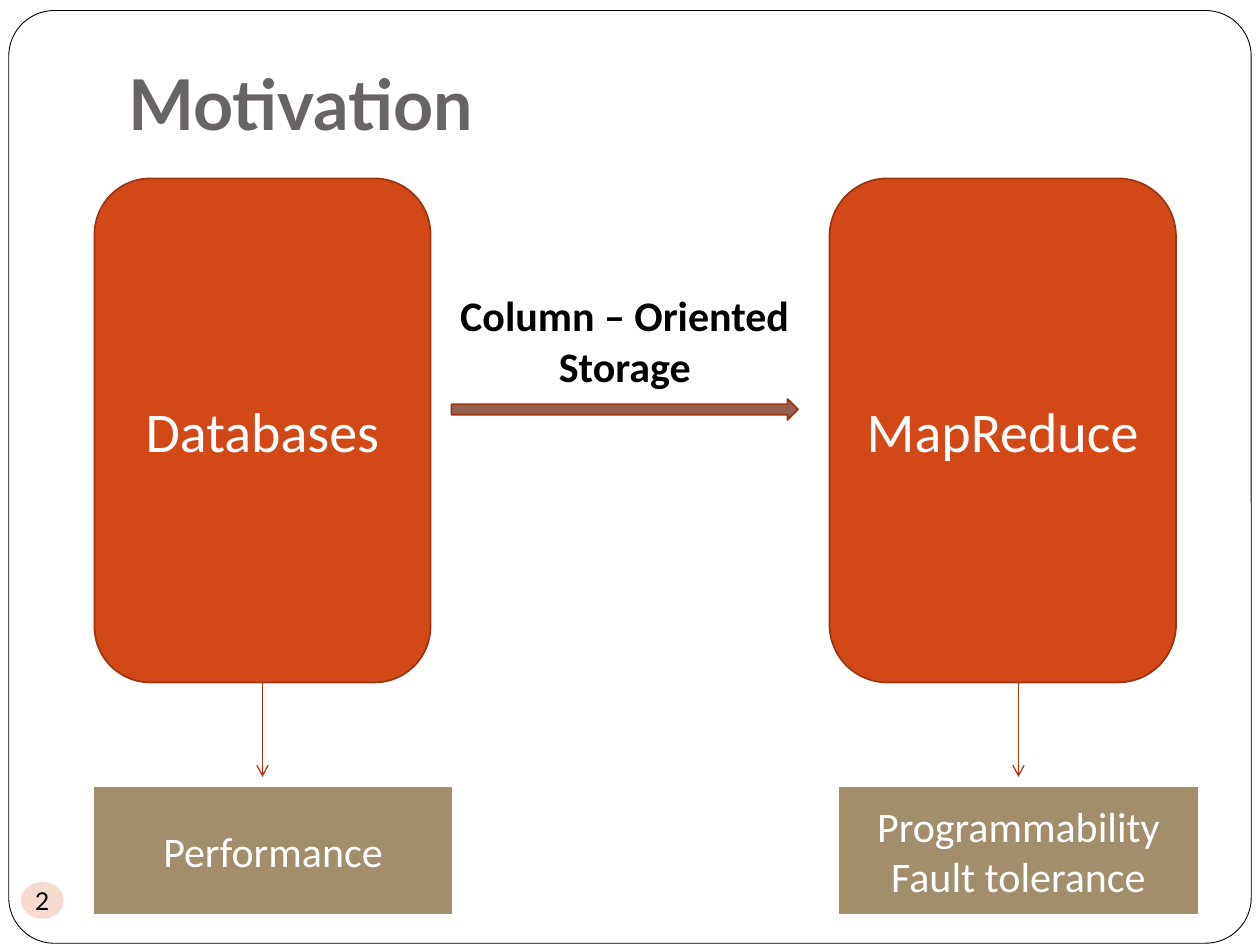
from dataclasses import dataclass

from lxml.etree import SubElement
from pptx import Presentation
from pptx.dml.color import RGBColor as RGB
from pptx.enum.shapes import MSO_CONNECTOR as CONNECTOR, MSO_SHAPE as SHAPE
from pptx.enum.text import MSO_ANCHOR as ANCHOR, MSO_AUTO_SIZE as AUTO_SIZE, PP_ALIGN as ALIGN
from pptx.oxml.ns import qn
from pptx.util import Pt


@dataclass(frozen=True)
class Theme:
    white: RGB = RGB(0xFF, 0xFF, 0xFF)
    black: RGB = RGB(0, 0, 0)
    title: RGB = RGB(0x69, 0x64, 0x64)
    system: RGB = RGB(0xD3, 0x48, 0x17)
    outline: RGB = RGB(0x9C, 0x35, 0x11)
    link: RGB = RGB(0xB1, 0x36, 0x0B)
    flow: RGB = RGB(0x95, 0x62, 0x51)
    benefit: RGB = RGB(0xA2, 0x8E, 0x6A)
    heading_font: str = "Lato"
    body_font: str = "Calibri"
    title_size: int = 40
    system_size: int = 32
    label_size: int = 24
    number_size: int = 14


T = Theme()


def pts(*values):
    return [Pt(v) for v in values]


def write(tf, lines, size, color, font=T.body_font, bold=False, align=ALIGN.CENTER):
    """Fill a text frame with one paragraph per line."""
    for i, line in enumerate(lines):
        p = tf.add_paragraph() if i else tf.paragraphs[0]
        p.text = line
        p.alignment = align
        p.font.name, p.font.size, p.font.bold = font, Pt(size), bold
        p.font.color.rgb = color


def add_box(slide, kind, box, fill, line=None, width=1):
    s = slide.shapes.add_shape(kind, *pts(*box))
    s.shadow.inherit = False
    s.fill.solid()
    s.fill.fore_color.rgb = fill
    if line is None:
        s.line.fill.background()
    else:
        s.line.color.rgb = line
        s.line.width = Pt(width)
    s.text_frame.vertical_anchor = ANCHOR.MIDDLE
    return s


def add_link(slide, start, end):
    """Draw a thin line with an open arrowhead at its end."""
    c = slide.shapes.add_connector(CONNECTOR.STRAIGHT, *pts(*start, *end))
    c.line.color.rgb = T.link
    c.line.width = Pt(0.75)
    SubElement(c.line._get_or_add_ln(), qn("a:tailEnd"), type="arrow")
    SubElement(c._element.spPr, qn("a:effectLst"))
    return c


def draw_frame(slide, box):
    s = add_box(slide, SHAPE.ROUNDED_RECTANGLE, box, T.white, T.black, 0.5)
    s.adjustments[0] = 0.049
    tree = slide.shapes._spTree
    tree.remove(s._element)
    tree.insert(2, s._element)


def draw_title(slide, box, text):
    title = slide.shapes.title
    title.left, title.top, title.width, title.height = pts(*box)
    tf = title.text_frame
    tf.auto_size = AUTO_SIZE.NONE
    tf.vertical_anchor = ANCHOR.BOTTOM
    tf.margin_bottom = Pt(7.2)
    write(tf, [text], T.title_size, T.title, T.heading_font, True, ALIGN.LEFT)


def draw_system(slide, box, name, benefits, link_x, benefit_x):
    """Draw a system with an arrow down to its benefits; x offsets are from the box."""
    x, y, w, h = box
    system_h, link_h, benefit_w, benefit_h = 288, 54, 204, 72
    system = add_box(slide, SHAPE.ROUNDED_RECTANGLE, (x, y, w, system_h), T.system, T.outline)
    write(system.text_frame, [name], T.system_size, T.white)

    benefit = add_box(slide, SHAPE.RECTANGLE,
                      (x + benefit_x, y + h - benefit_h, benefit_w, benefit_h),
                      T.benefit, T.benefit)
    write(benefit.text_frame, benefits, T.label_size, T.white)

    top = y + system_h
    link = add_link(slide, (x + link_x, top), (x + link_x, top + link_h))
    if link_x == w / 2:
        link.begin_connect(system, 2)


def draw_flow(slide, box, lines):
    """Draw a label above a block arrow that is inset at both sides."""
    x, y, w, h = box
    inset, arrow_h = 12, 12
    label = slide.shapes.add_textbox(*pts(x, y, w, h - arrow_h))
    label.text_frame.word_wrap = True
    write(label.text_frame, lines, T.label_size, T.black, bold=True)
    add_box(slide, SHAPE.RIGHT_ARROW,
            (x + inset, y + h - arrow_h, w - 2 * inset, arrow_h), T.flow, T.outline)


def draw_slide_number(slide, box, number):
    s = add_box(slide, SHAPE.OVAL, box, T.system)
    color = s._element.spPr.find(qn("a:solidFill"))[0]
    SubElement(color, qn("a:alpha"), val="20000")
    tf = s.text_frame
    tf.word_wrap = False
    tf.margin_left = tf.margin_top = tf.margin_right = tf.margin_bottom = 0
    write(tf, [str(number)], T.number_size, T.black, T.heading_font)


def main():
    prs = Presentation()
    prs.slide_width, prs.slide_height = pts(720, 540)
    slide = prs.slides.add_slide(prs.slide_layouts[5])
    draw_frame(slide, (5, 6, 710, 533))
    draw_title(slide, (66, 12, 612, 78), "Motivation")
    draw_system(slide, (54, 102, 192, 420), "Databases", ["Performance"], 96, 0)
    draw_system(slide, (474, 102, 198, 420), "MapReduce",
                ["Programmability", "Fault tolerance"], 108, 6)
    draw_flow(slide, (246, 162, 222, 78), ["Column – Oriented", "Storage"])
    draw_slide_number(slide, (12, 504, 24.5, 21), 2)
    prs.save("out.pptx")


if __name__ == "__main__":
    main()
